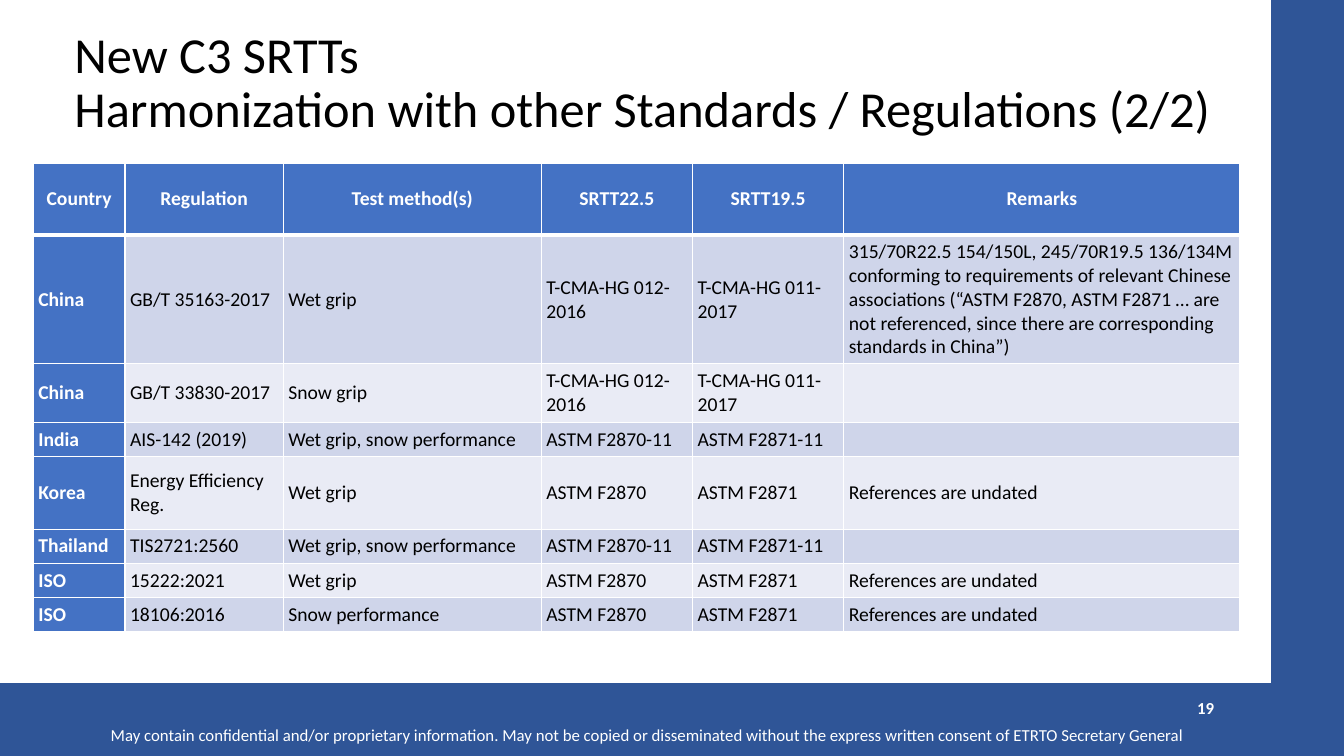
from lxml import etree
from pptx import Presentation
from pptx import util as u
from pptx.dml import color
from pptx.enum import shapes, text
from pptx.oxml import ns

COLUMNS = [0.91, 1.57, 2.56, 1.5, 1.5, 3.93]
HEIGHTS = [0.71, 1.28, 0.58, 0.34, 0.72, 0.34, 0.34, 0.34]
UNDATED = "References are undated"
ROWS = [
    ["Country", "Regulation", "Test method(s)", "SRTT22.5", "SRTT19.5", "Remarks"],
    ["China", "GB/T 35163-2017", "Wet grip", "T-CMA-HG 012-2016", "T-CMA-HG 011-2017",
     "315/70R22.5 154/150L, 245/70R19.5 136/134M conforming to requirements of relevant "
     "Chinese associations (“ASTM F2870, ASTM F2871 … are not referenced, since there are "
     "corresponding standards in China”)"],
    ["China", "GB/T 33830-2017", "Snow grip", "T-CMA-HG 012-2016", "T-CMA-HG 011-2017", ""],
    ["India", "AIS-142 (2019)", "Wet grip, snow performance", "ASTM F2870-11", "ASTM F2871-11", ""],
    ["Korea", "Energy Efficiency Reg.", "Wet grip", "ASTM F2870", "ASTM F2871", UNDATED],
    ["Thailand", "TIS2721:2560", "Wet grip, snow performance", "ASTM F2870-11", "ASTM F2871-11", ""],
    ["ISO", "15222:2021", "Wet grip", "ASTM F2870", "ASTM F2871", UNDATED],
    ["ISO", "18106:2016", "Snow performance", "ASTM F2870", "ASTM F2871", UNDATED],
]


def rgb(value):
    return color.RGBColor.from_string(value)


class Deck:
    """Holds the style and the current slide, and draws each kind of element."""

    font = "Calibri"
    white, black = "FFFFFF", "000000"
    frame, header = "2F5597", "4472C4"
    bands = ["E9EBF5", "CFD5EA"]

    def __init__(self, s):
        self.s = s

    def bar(self, x, y, w, h):
        sp = self.s.shapes.add_shape(shapes.MSO_SHAPE.RECTANGLE, *map(u.Inches, (x, y, w, h)))
        sp.shadow.inherit = False
        sp.fill.solid()
        sp.fill.fore_color.rgb = rgb(self.frame)
        sp.line.color.rgb = rgb(self.frame)
        sp.line.width = u.Pt(1)

    def run(self, p, words, size, ink, bold=False):
        r = p.add_run()
        r.text = words
        r.font.name = self.font
        r.font.size = u.Pt(size)
        r.font.bold = bold
        r.font.color.rgb = rgb(ink)

    def label(self, x, y, w, h, lines, size, ink, bold=False,
              align=text.PP_ALIGN.LEFT, spacing=1.0):
        tf = self.s.shapes.add_textbox(*map(u.Inches, (x, y, w, h))).text_frame
        tf.word_wrap = True
        tf.vertical_anchor = text.MSO_ANCHOR.MIDDLE
        p = tf.paragraphs[0]
        p.alignment = align
        p.line_spacing = spacing
        for i, line in enumerate(lines):
            if i:
                p.add_line_break()
            self.run(p, line, size, ink, bold)

    def borders(self, cell, row):
        tcPr = cell._tc.get_or_add_tcPr()
        widths = {"lnL": 1, "lnR": 1, "lnT": 3 if row == 1 else 1, "lnB": 3 if row == 0 else 1}
        for side, width in widths.items():
            ln = etree.SubElement(tcPr, ns.qn("a:" + side), w=str(u.Pt(width)))
            fill = etree.SubElement(ln, ns.qn("a:solidFill"))
            etree.SubElement(fill, ns.qn("a:srgbClr"), val=self.white)

    def cell(self, cell, words, row, col):
        heading = row == 0 or col == 0
        self.borders(cell, row)
        cell.fill.solid()
        cell.fill.fore_color.rgb = rgb(self.header if heading else self.bands[row % 2])
        cell.vertical_anchor = text.MSO_ANCHOR.MIDDLE
        cell.margin_left = cell.margin_right = u.Inches(0.05)
        cell.margin_top = cell.margin_bottom = u.Inches(0.05)
        p = cell.text_frame.paragraphs[0]
        p.alignment = text.PP_ALIGN.CENTER if row == 0 else text.PP_ALIGN.LEFT
        if words:
            self.run(p, words, 14, self.white if heading else self.black, heading)
        else:
            etree.SubElement(p._p, ns.qn("a:endParaRPr"), sz="1400")

    def table(self, x, y, rows, widths, heights):
        size = map(u.Inches, (x, y, sum(widths), sum(heights)))
        table = self.s.shapes.add_table(len(rows), len(widths), *size).table
        for column, width in zip(table.columns, widths):
            column.width = u.Inches(width)
        for i, words in enumerate(rows):
            table.rows[i].height = u.Inches(heights[i])
            for j, word in enumerate(words):
                self.cell(table.cell(i, j), word, i, j)


def main():
    prs = Presentation()
    prs.slide_width, prs.slide_height = u.Inches(13.33), u.Inches(7.5)
    deck = Deck(prs.slides.add_slide(prs.slide_layouts[6]))
    deck.bar(0, 6.78, 13.32, 0.72)
    deck.bar(12.61, 0, 0.72, 7.5)
    deck.label(1, 7.21, 11.33, 0.17,
               ["May contain confidential and/or proprietary information. May not be copied or "
                "disseminated without the express written consent of ETRTO Secretary General"],
               12, deck.white)
    deck.table(0.33, 1.62, ROWS, COLUMNS, HEIGHTS)
    deck.label(9.14, 6.82, 3, 0.4, ["19"], 12, deck.white, True, text.PP_ALIGN.RIGHT)
    deck.label(0.64, 0.39, 11.5, 0.89,
               ["New C3 SRTTs", "Harmonization with other Standards / Regulations (2/2)"],
               36, deck.black, spacing=0.9)
    prs.save("out.pptx")


if __name__ == "__main__":
    main()
